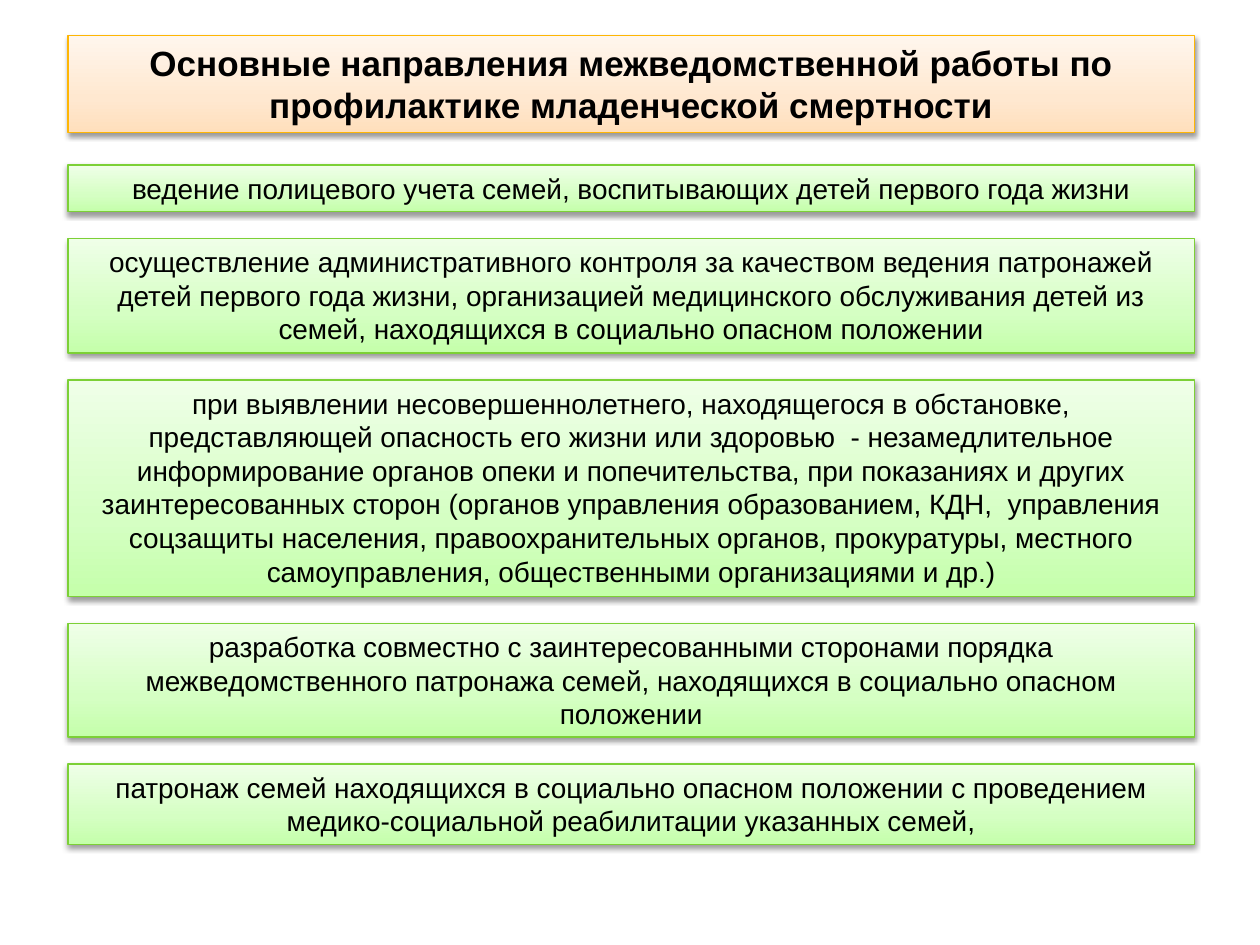
from dataclasses import dataclass

from lxml.etree import SubElement
from pptx import Presentation
from pptx.dml.color import RGBColor
from pptx.enum.shapes import MSO_SHAPE
from pptx.enum.text import MSO_ANCHOR, MSO_AUTO_SIZE, PP_ALIGN
from pptx.oxml.ns import qn
from pptx.shapes.autoshape import Shape
from pptx.util import Cm, Pt

BLACK = RGBColor(0x00, 0x00, 0x00)
ORANGE = RGBColor(0xFE, 0xB6, 0x04)
PEACH = RGBColor(0xFF, 0xDF, 0xBC)
PEACH_LIGHT = RGBColor(0xFF, 0xE8, 0xD0)
PEACH_PALE = RGBColor(0xFF, 0xF6, 0xED)
GREEN = RGBColor(0x7C, 0xD0, 0x36)
LIME = RGBColor(0xC4, 0xFF, 0xAA)
LIME_LIGHT = RGBColor(0xD5, 0xFF, 0xC3)
LIME_PALE = RGBColor(0xEF, 0xFF, 0xE8)

LEFT, WIDTH = 1.37, 22.71
TITLE_TOP, TITLE_HEIGHT = 0.71, 1.96
FIRST_TOP, GAP = 3.33, 0.54


@dataclass(frozen=True)
class Palette:
    line: RGBColor
    bottom: RGBColor
    middle: RGBColor
    top: RGBColor


@dataclass(frozen=True)
class Direction:
    text: str
    height: float


TITLE_PALETTE = Palette(ORANGE, PEACH, PEACH_LIGHT, PEACH_PALE)
DIRECTION_PALETTE = Palette(GREEN, LIME, LIME_LIGHT, LIME_PALE)

TITLE = "Основные направления межведомственной работы по профилактике младенческой смертности"
DIRECTIONS = [
    Direction("ведение полицевого учета семей, воспитывающих детей первого года жизни", 0.94),
    Direction(
        "осуществление административного контроля за качеством ведения патронажей "
        "детей первого года жизни, организацией медицинского обслуживания детей из "
        "семей, находящихся в социально опасном положении", 2.31),
    Direction(
        "при выявлении несовершеннолетнего, находящегося в обстановке, "
        "представляющей опасность его жизни или здоровью  - незамедлительное "
        "информирование органов опеки и попечительства, при показаниях и других "
        "заинтересованных сторон (органов управления образованием, КДН,  управления "
        "соцзащиты населения, правоохранительных органов, прокуратуры, местного "
        "самоуправления, общественными организациями и др.)", 4.37),
    Direction(
        "разработка совместно с заинтересованными сторонами порядка "
        "межведомственного патронажа семей, находящихся в социально опасном "
        "положении", 2.29),
    Direction(
        "патронаж семей находящихся в социально опасном положении с проведением "
        "медико-социальной реабилитации указанных семей,", 1.63),
]


def place(box: Shape, top: float, height: float) -> None:
    box.left, box.top = Cm(LEFT), Cm(top)
    box.width, box.height = Cm(WIDTH), Cm(height)


def add_color(parent, color: RGBColor):
    return SubElement(parent, qn("a:srgbClr"), val=str(color))


def paint(box: Shape, palette: Palette) -> None:
    """Give the box a vertical three-stop gradient, a thin line and a soft shadow."""
    box.fill.gradient()
    box.fill.gradient_angle = 90
    stops = box._element.spPr.find(qn("a:gradFill")).find(qn("a:gsLst"))
    for stop in list(stops):
        stops.remove(stop)
    for percent, color in ((0, palette.bottom), (35, palette.middle), (100, palette.top)):
        add_color(SubElement(stops, qn("a:gs"), pos=str(percent * 1000)), color)

    box.line.color.rgb = palette.line
    box.line.width = Pt(0.75)

    box.shadow.inherit = False
    effects = box._element.spPr.find(qn("a:effectLst"))
    shadow = SubElement(effects, qn("a:outerShdw"), blurRad=str(Pt(3.1)),
                        dist=str(Pt(1.6)), dir="5400000", rotWithShape="0")
    SubElement(add_color(shadow, BLACK), qn("a:alpha"), val="38000")


def write(box: Shape, text: str, *, size: float, bold: bool = False) -> None:
    frame = box.text_frame
    frame.word_wrap = True
    frame.auto_size = MSO_AUTO_SIZE.NONE
    frame.vertical_anchor = MSO_ANCHOR.TOP
    para = frame.paragraphs[0]
    para.alignment = PP_ALIGN.CENTER
    span = para.add_run()
    span.text = text
    span.font.name = "Arial"
    span.font.size = Pt(size)
    span.font.bold = bold
    span.font.color.rgb = BLACK


def main() -> None:
    deck = Presentation()
    deck.slide_width, deck.slide_height = Cm(25.4), Cm(19.05)
    page = deck.slides.add_slide(deck.slide_layouts.get_by_name("Title Only"))

    title = page.shapes.title
    place(title, TITLE_TOP, TITLE_HEIGHT)
    paint(title, TITLE_PALETTE)
    write(title, TITLE, size=20, bold=True)

    top = FIRST_TOP
    for direction in DIRECTIONS:
        box = page.shapes.add_shape(MSO_SHAPE.RECTANGLE, Cm(LEFT), Cm(top),
                                    Cm(WIDTH), Cm(direction.height))
        paint(box, DIRECTION_PALETTE)
        write(box, direction.text, size=16)
        top += direction.height + GAP

    deck.save("out.pptx")


if __name__ == "__main__":
    main()
